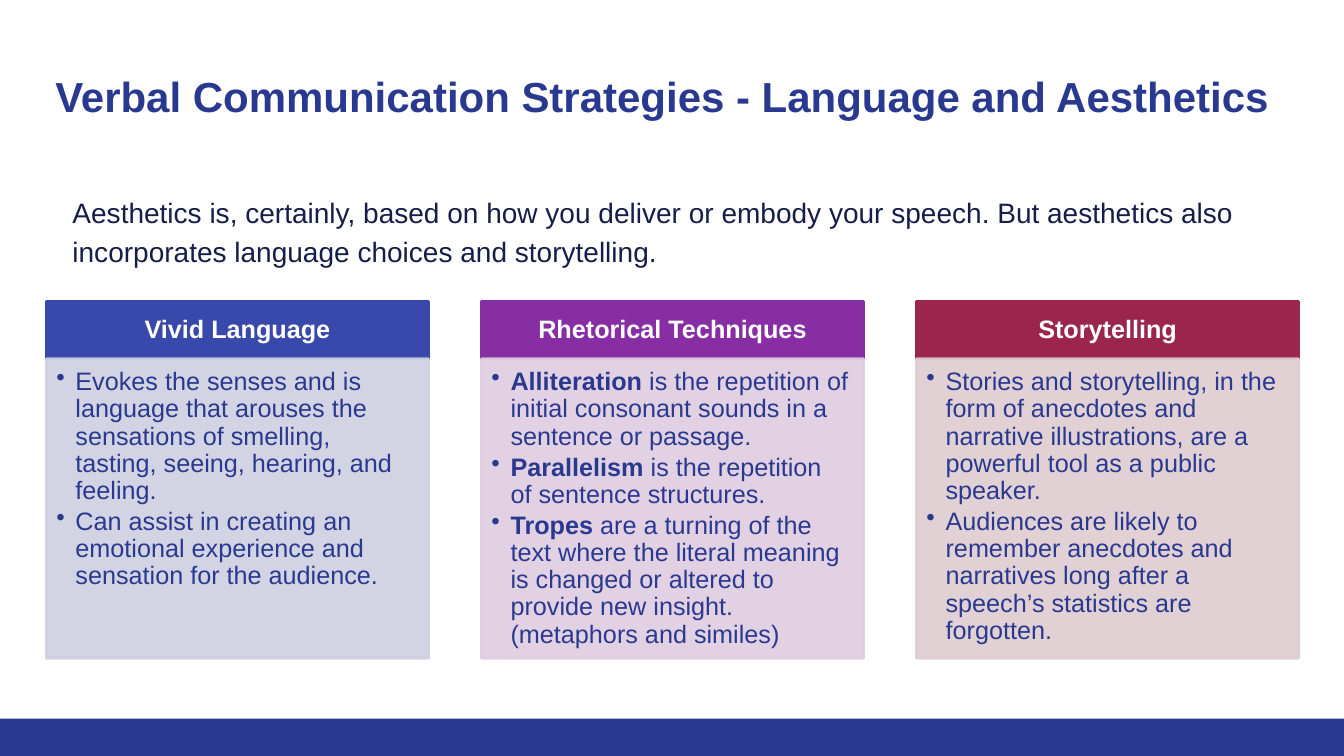
from pptx import Presentation
from pptx.dml.color import RGBColor
from pptx.enum.shapes import MSO_SHAPE as Shape
from pptx.enum.text import MSO_ANCHOR as Anchor, PP_ALIGN as Align
from pptx.oxml.ns import qn
from pptx.util import Inches, Pt
from lxml.etree import SubElement

COLORS = {
    "navy": "2A3990", "ink": "151D48", "white": "FFFFFF",
    "blue": "3949AB", "pale blue": "CED0E2",
    "purple": "882EA4", "pale purple": "DECDE0",
    "crimson": "9C254D", "pale crimson": "DECDD0",
}

# Heading, heading colour, bullets; each bullet is a list of (text, bold) runs
STRATEGIES = [
    ("Vivid Language", "blue", [
        [("Evokes the senses and is language that arouses the sensations of "
          "smelling, tasting, seeing, hearing, and feeling.", False)],
        [("Can assist in creating an emotional experience and sensation for "
          "the audience.", False)],
    ]),
    ("Rhetorical Techniques", "purple", [
        [("Alliteration", True),
         (" is the repetition of initial consonant sounds in a sentence or "
          "passage.", False)],
        [("Parallelism ", True),
         ("is the repetition of sentence structures.", False)],
        [("Tropes", True),
         (" are a turning of the text where the literal meaning is changed or "
          "altered to provide new insight. (metaphors and similes)", False)],
    ]),
    ("Storytelling", "crimson", [
        [("Stories and storytelling, in the form of anecdotes and narrative "
          "illustrations, are a powerful tool as a public speaker.", False)],
        [("Audiences are likely to remember anecdotes and narratives long "
          "after a speech’s statistics are forgotten.", False)],
    ]),
]

COLUMN_LEFT, COLUMN_WIDTH, COLUMN_STEP = 0.46, 3.79, 4.315
HEADING_TOP, HEADING_HEIGHT, PANEL_HEIGHT = 2.99, 0.57, 2.97


def rgb(name):
    return RGBColor.from_string(COLORS[name])


def write(frame, paragraphs, size=18, color="navy", align=Align.LEFT,
          anchor=Anchor.TOP, insets=(0.1, 0.1, 0.1, 0.1), line_spacing=1.0,
          space_after=0, left_indent=0, bullet=None):
    """Fill a text frame with paragraphs, each a list of (text, bold) runs."""
    frame.word_wrap = True
    frame.vertical_anchor = anchor
    (frame.margin_left, frame.margin_top,
     frame.margin_right, frame.margin_bottom) = map(Inches, insets)
    for index, runs in enumerate(paragraphs):
        paragraph = frame.paragraphs[0] if index == 0 else frame.add_paragraph()
        properties = paragraph._p.get_or_add_pPr()
        properties.set("marL", str(Inches(left_indent)))
        if bullet:
            properties.set("indent", str(-Inches(left_indent)))
            SubElement(properties, qn("a:buChar"), char=bullet)
        paragraph.alignment = align
        paragraph.line_spacing = line_spacing
        paragraph.space_after = Pt(space_after)
        for text, bold in runs:
            run = paragraph.add_run()
            run.text = text
            run.font.name = "Arial"
            run.font.size = Pt(size)
            run.font.bold = bold
            run.font.color.rgb = rgb(color)


def add_text(slide, left, top, width, height, paragraphs, **text_format):
    box = slide.shapes.add_textbox(*map(Inches, (left, top, width, height)))
    write(box.text_frame, paragraphs, **text_format)


def add_block(slide, left, top, width, height, color, outlined=True, opacity=100):
    block = slide.shapes.add_shape(
        Shape.RECTANGLE, *map(Inches, (left, top, width, height)))
    block.shadow.inherit = False
    block.fill.solid()
    block.fill.fore_color.rgb = rgb(color)
    if outlined:
        block.line.color.rgb = rgb(color)
        block.line.width = Pt(2)
    else:
        block.line.fill.background()
    if opacity < 100:
        for tint in list(block._element.spPr.iter(qn("a:srgbClr"))):
            SubElement(tint, qn("a:alpha"), val=str(opacity * 1000))
    return block


def add_strategy(slide, left, heading, color, bullets):
    header = add_block(slide, left, HEADING_TOP, COLUMN_WIDTH, HEADING_HEIGHT, color)
    write(header.text_frame, [[(heading, True)]], color="white",
          align=Align.CENTER, anchor=Anchor.MIDDLE,
          insets=(0.14, 0.08, 0.14, 0.08), line_spacing=0.9)
    panel = add_block(slide, left, HEADING_TOP + HEADING_HEIGHT, COLUMN_WIDTH,
                      PANEL_HEIGHT, f"pale {color}", opacity=90)
    write(panel.text_frame, bullets, insets=(0.1, 0.1, 0.14, 0.16),
          line_spacing=0.9, space_after=2.7, left_indent=0.19, bullet="•")


def main():
    deck = Presentation()
    deck.slide_width, deck.slide_height = Inches(13.33), Inches(7.5)
    slide = deck.slides.add_slide(deck.slide_layouts[6])

    add_block(slide, 0, 7.13, 13.33, 0.37, "navy", outlined=False)
    add_text(slide, 0.45, 0.6, 12.42, 0.89,
             [[("Verbal Communication Strategies - Language and Aesthetics", True)]],
             size=30)
    add_text(slide, 0.45, 1.79, 12.42, 1.1,
             [[("Aesthetics is, certainly, based on how you deliver or embody your "
                "speech. But aesthetics also incorporates language choices and "
                "storytelling.", False)]],
             size=20, color="ink", line_spacing=1.15, left_indent=0.17)
    for index, strategy in enumerate(STRATEGIES):
        add_strategy(slide, COLUMN_LEFT + index * COLUMN_STEP, *strategy)

    deck.save("out.pptx")


if __name__ == "__main__":
    main()
